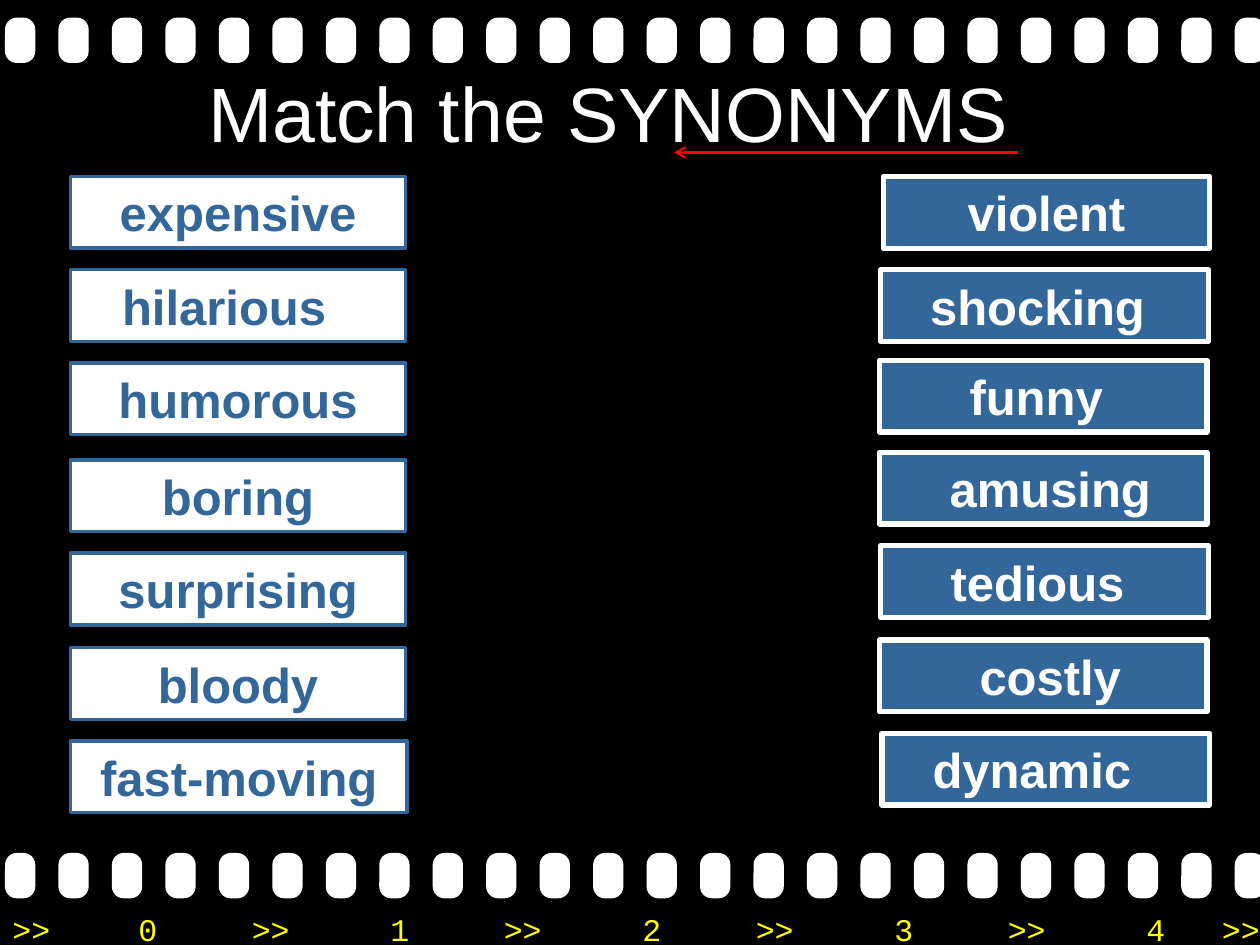
from dataclasses import dataclass

from lxml import etree
from pptx import Presentation
from pptx.dml.color import RGBColor
from pptx.enum import shapes, text
from pptx.oxml import ns
from pptx.util import Inches, Pt


@dataclass(frozen=True)
class Theme:
    black: RGBColor = RGBColor(0, 0, 0)
    white: RGBColor = RGBColor(255, 255, 255)
    blue: RGBColor = RGBColor(0x33, 0x66, 0x99)
    red: RGBColor = RGBColor(255, 0, 0)
    yellow: RGBColor = RGBColor(255, 255, 0)
    font: str = "Arial"
    counter_font: str = "Courier New"
    title_size: int = 44
    word_size: int = 28
    counter_size: int = 18


@dataclass(frozen=True)
class CardStyle:
    fill: RGBColor
    ink: RGBColor
    line: RGBColor
    line_width: float


@dataclass(frozen=True)
class Card:
    word: str
    left: float
    top: float
    width: float
    nudge: float = 0


THEME = Theme()
LEFT_STYLE = CardStyle(THEME.white, THEME.blue, THEME.blue, 2)
RIGHT_STYLE = CardStyle(THEME.blue, THEME.white, THEME.white, 3)
CARD_HEIGHT = 0.57
INSET = 0.1
HOLE_COUNT = 24
HOLE_PITCH = 9.76 / (HOLE_COUNT - 1)

LEFT_CARDS = [
    Card("expensive", 0.56, 1.4, 2.66),
    Card("hilarious", 0.56, 2.14, 2.66, -0.22),
    Card("humorous", 0.56, 2.88, 2.66),
    Card("boring", 0.56, 3.65, 2.66),
    Card("surprising", 0.56, 4.39, 2.66),
    Card("bloody", 0.56, 5.14, 2.66),
    Card("fast-moving", 0.56, 5.88, 2.67),
]
RIGHT_CARDS = [
    Card("violent", 7.01, 1.4, 2.59),
    Card("shocking", 6.99, 2.14, 2.6, -0.11),
    Card("funny", 6.98, 2.86, 2.6, -0.11),
    Card("amusing", 6.98, 3.59, 2.6, 0.11),
    Card("tedious", 6.99, 4.33, 2.6, -0.11),
    Card("costly", 6.98, 5.08, 2.6, 0.11),
    Card("dynamic", 7, 5.82, 2.6, -0.22),
]


def add_span(para, words: str, font: str, size: float, color: RGBColor, bold: bool = False) -> None:
    span = para.add_run()
    span.text = words
    span.font.name = font
    span.font.size = Pt(size)
    span.font.bold = bold
    span.font.color.rgb = color


def center_text(frame, nudge: float) -> None:
    frame.word_wrap = True
    frame.vertical_anchor = text.MSO_ANCHOR.MIDDLE
    frame.margin_left = Inches(INSET + max(nudge, 0))
    frame.margin_right = Inches(INSET + max(-nudge, 0))
    frame.paragraphs[0].alignment = text.PP_ALIGN.CENTER


def add_film_strip(page, top: float) -> None:
    for index in range(HOLE_COUNT):
        hole = page.shapes.add_shape(
            shapes.MSO_SHAPE.ROUNDED_RECTANGLE,
            Inches(0.04 + index * HOLE_PITCH), Inches(top), Inches(0.24), Inches(0.36),
        )
        hole.adjustments[0] = 0.39
        hole.shadow.inherit = False
        hole.fill.solid()
        hole.fill.fore_color.rgb = THEME.white
        hole.line.fill.background()


def add_counter(page) -> None:
    box = page.shapes.add_textbox(Inches(0), Inches(7.17), Inches(10.2), Inches(0.4))
    box.text_frame.word_wrap = True
    para = box.text_frame.paragraphs[0]
    stops = [start + offset for start in range(1, 10, 2) for offset in (0, 0.9)]
    stops[-1] = 9.6
    tabs = etree.SubElement(para._p.get_or_add_pPr(), ns.qn("a:tabLst"))
    for stop in stops:
        etree.SubElement(tabs, ns.qn("a:tab"), pos=str(Inches(stop)), algn="l")
    counter = "".join(f">>\t{number}\t" for number in range(5)) + ">>"
    add_span(para, counter, THEME.counter_font, THEME.counter_size, THEME.yellow)


def add_title(page, words: str) -> None:
    title = page.shapes.title
    title.left, title.top = Inches(0.5), Inches(0.38)
    title.width, title.height = Inches(9), Inches(1.02)
    center_text(title.text_frame, -0.34)
    add_span(title.text_frame.paragraphs[0], words, THEME.font, THEME.title_size, THEME.white)


def add_card(page, card: Card, style: CardStyle) -> None:
    box = page.shapes.add_shape(
        shapes.MSO_SHAPE.RECTANGLE,
        Inches(card.left), Inches(card.top), Inches(card.width), Inches(CARD_HEIGHT),
    )
    box.shadow.inherit = False
    box.fill.solid()
    box.fill.fore_color.rgb = style.fill
    box.line.color.rgb = style.line
    box.line.width = Pt(style.line_width)
    center_text(box.text_frame, card.nudge)
    add_span(box.text_frame.paragraphs[0], card.word, THEME.font, THEME.word_size, style.ink, True)


def add_arrow(page) -> None:
    arrow = page.shapes.add_connector(
        shapes.MSO_CONNECTOR.STRAIGHT, Inches(8.08), Inches(1.21), Inches(5.35), Inches(1.21)
    )
    arrow.line.color.rgb = THEME.red
    arrow.line.width = Pt(1.25)
    etree.SubElement(arrow.line._get_or_add_ln(), ns.qn("a:tailEnd"), type="arrow")
    etree.SubElement(arrow._element.spPr, ns.qn("a:effectLst"))


def main() -> None:
    deck = Presentation()
    deck.slide_width, deck.slide_height = Inches(10), Inches(7.5)
    page = deck.slides.add_slide(deck.slide_layouts[5])
    page.background.fill.solid()
    page.background.fill.fore_color.rgb = THEME.black
    for top in (6.77, 0.14):
        add_film_strip(page, top)
    add_counter(page)
    add_title(page, "Match the SYNONYMS")
    for cards, style in ((LEFT_CARDS, LEFT_STYLE), (RIGHT_CARDS, RIGHT_STYLE)):
        for card in cards:
            add_card(page, card, style)
    add_arrow(page)
    deck.save("out.pptx")


if __name__ == "__main__":
    main()
